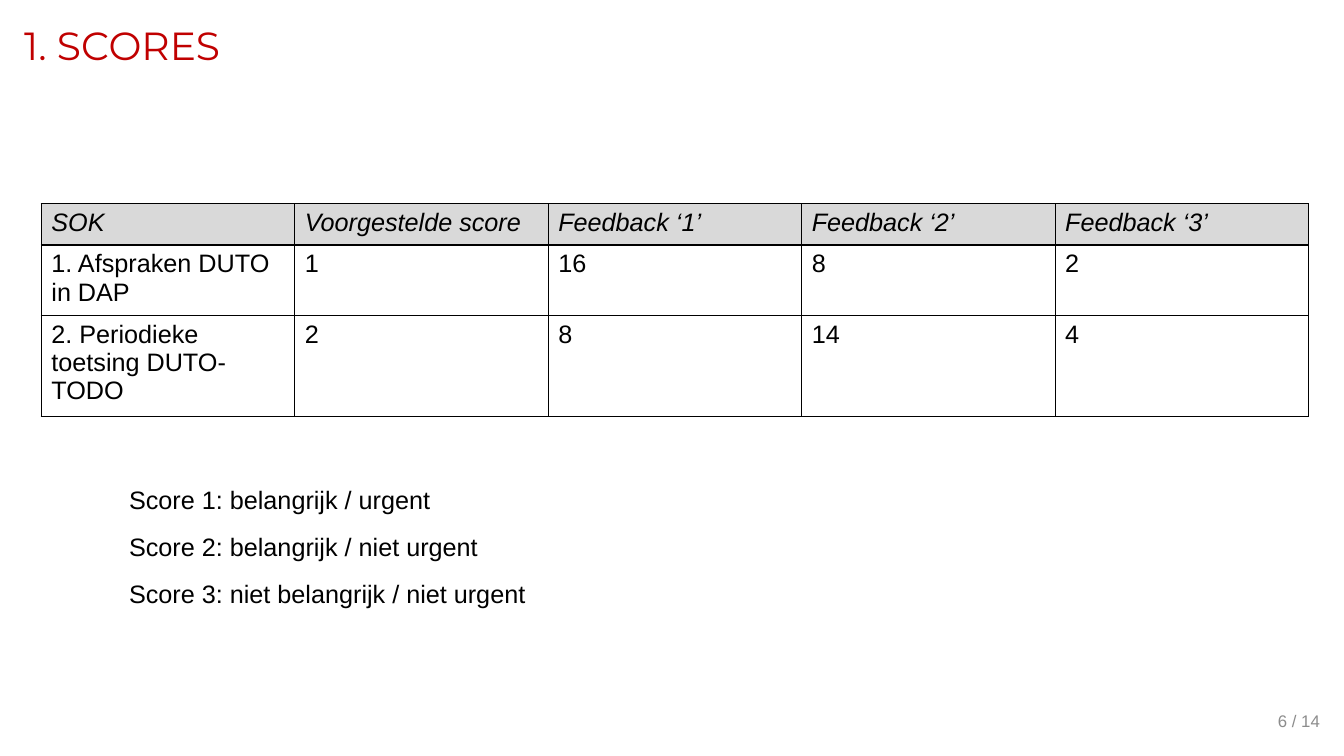
from lxml import etree
from pptx import Presentation
from pptx.dml.color import RGBColor
from pptx.enum import text as t
from pptx.oxml import ns
from pptx.util import Inches, Pt

TITLE = "1. SCORES"
ROWS = [
    ("SOK", "Voorgestelde score", "Feedback ‘1’", "Feedback ‘2’", "Feedback ‘3’"),
    ("1. Afspraken DUTO in DAP", "1", "16", "8", "2"),
    ("2. Periodieke toetsing DUTO-TODO", "2", "8", "14", "4"),
]
SCORES = [
    "Score 1: belangrijk / urgent",
    "Score 2: belangrijk / niet urgent",
    "Score 3: niet belangrijk / niet urgent",
]
PAGE = "6 / 14"

RED = RGBColor(0xC0, 0x00, 0x00)
BLACK = RGBColor(0x00, 0x00, 0x00)
GRAY = RGBColor(0x8C, 0x8C, 0x8C)
SHADE = RGBColor(0xD9, 0xD9, 0xD9)

TABLE_W, ROW_H = 12.57, 0.41


def write(frame, *lines, size=18, font="Arial", color=BLACK, italic=False,
          align=t.PP_ALIGN.LEFT, before=0, spacing=1.0):
    """Put each line in its own paragraph, all in one format."""
    frame.word_wrap = True
    for i, line in enumerate(lines):
        par = frame.add_paragraph() if i else frame.paragraphs[0]
        par.alignment, par.line_spacing = align, spacing
        par.space_before = Pt(before)
        run = par.add_run()
        run.text = line
        face = run.font
        face.size, face.name, face.color.rgb = Pt(size), font, color
        face.bold, face.italic = False, italic


def place(shape, left, top, width, height):
    shape.left, shape.top = Inches(left), Inches(top)
    shape.width, shape.height = Inches(width), Inches(height)


def border(cell, color=BLACK, width=1):
    props = cell._tc.get_or_add_tcPr()
    for side in ("a:lnL", "a:lnR", "a:lnT", "a:lnB"):
        line = etree.SubElement(props, ns.qn(side), w=str(Pt(width)))
        fill = etree.SubElement(line, ns.qn("a:solidFill"))
        etree.SubElement(fill, ns.qn("a:srgbClr"), val=str(color))


def unbullet(par):
    props = par._p.get_or_add_pPr()
    props.set("marL", "0")
    props.set("indent", "0")
    etree.SubElement(props, ns.qn("a:buNone"))


def main():
    deck = Presentation()
    deck.slide_width, deck.slide_height = Inches(13.33), Inches(7.5)
    slide = deck.slides.add_slide(deck.slide_layouts[1])

    title, body = slide.shapes.title, slide.placeholders[1]
    place(title, 0.14, 0.13, 12.95, 0.6)
    title.text_frame.auto_size = t.MSO_AUTO_SIZE.NONE
    title.text_frame.vertical_anchor = t.MSO_ANCHOR.BOTTOM
    write(title.text_frame, TITLE, size=28, font="Montserrat", color=RED, spacing=0.9)

    place(body, 1.18, 4.75, 6.66, 1.35)
    body.text_frame.auto_size = t.MSO_AUTO_SIZE.SHAPE_TO_FIT_TEXT
    write(body.text_frame, *SCORES, before=12)
    for par in body.text_frame.paragraphs:
        unbullet(par)

    table = slide.shapes.add_table(
        len(ROWS), len(ROWS[0]), Inches(0.41), Inches(2.02),
        Inches(TABLE_W), Inches(ROW_H * len(ROWS))).table
    table.first_row = table.horz_banding = False
    for r, row in enumerate(ROWS):
        for c, words in enumerate(row):
            cell = table.cell(r, c)
            border(cell)
            if r == 0:
                cell.fill.solid()
                cell.fill.fore_color.rgb = SHADE
            else:
                cell.fill.background()
            write(cell.text_frame, words, italic=r == 0)

    page = slide.shapes.add_textbox(
        Inches(10.19), Inches(6.95), Inches(3), Inches(0.4)).text_frame
    page.vertical_anchor = t.MSO_ANCHOR.MIDDLE
    write(page, PAGE, size=12, color=GRAY, align=t.PP_ALIGN.RIGHT)

    deck.save("out.pptx")


if __name__ == "__main__":
    main()
